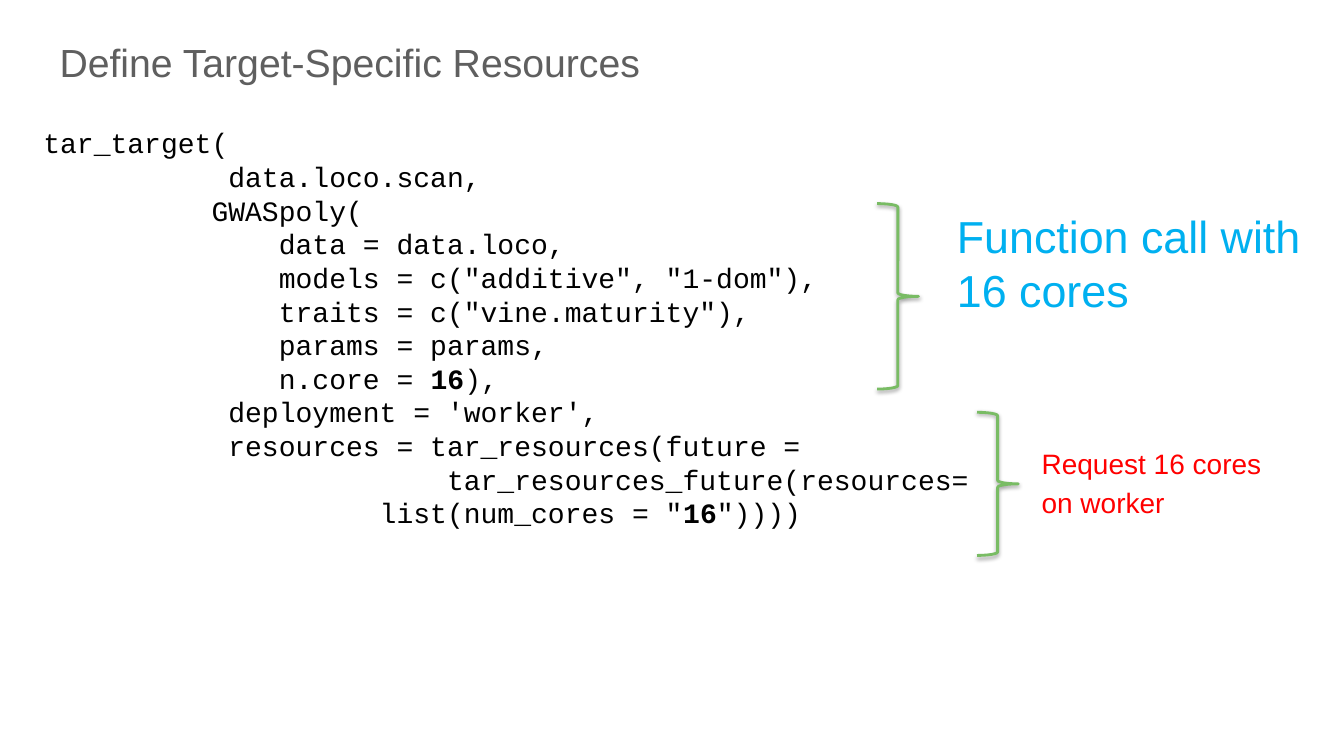
from lxml.etree import SubElement
from pptx import Presentation
from pptx.dml.color import RGBColor
from pptx.enum.shapes import MSO_SHAPE
from pptx.enum.text import MSO_ANCHOR
from pptx.oxml.ns import qn
from pptx.util import Inches, Pt

BLACK = RGBColor(0x00, 0x00, 0x00)
GREY = RGBColor(0x5F, 0x5F, 0x5F)
BLUE = RGBColor(0x00, 0xB0, 0xF0)
RED = RGBColor(0xFF, 0x00, 0x00)
GREEN = RGBColor(0x79, 0xBC, 0x64)

TITLE = {"name": "Arial", "size": Pt(28)}
CALL = {"name": "Arial", "size": Pt(32)}
NOTE = {"name": "Arial", "size": Pt(20)}
CODE = {"name": "Courier New", "size": Pt(20)}

SCRIPT = """tar_target(
           data.loco.scan,
          GWASpoly(
              data = data.loco,
              models = c("additive", "1-dom"),
              traits = c("vine.maturity"),
              params = params,
              n.core = 16),
           deployment = 'worker',
           resources = tar_resources(future =
                        tar_resources_future(resources=
                    list(num_cores = "16"))))"""


def add_run(para, text, form, color):
    """Add a run with the given font values."""
    run = para.add_run()
    run.text = text
    for key, value in form.items():
        setattr(run.font, key, value)
    run.font.color.rgb = color


def add_box(slide, area, anchor=MSO_ANCHOR.TOP):
    """Add an empty wrapping text box and return its frame."""
    frame = slide.shapes.add_textbox(*map(Inches, area)).text_frame
    form = {"word_wrap": True, "vertical_anchor": anchor}
    for side in ("left", "top", "right", "bottom"):
        form["margin_" + side] = Inches(0.05)
    for key, value in form.items():
        setattr(frame, key, value)
    return frame


def add_label(slide, area, text, form, color, anchor=MSO_ANCHOR.TOP):
    """Add a one-paragraph label."""
    para = add_box(slide, area, anchor).paragraphs[0]
    add_run(para, text, form, color)
    return para


def add_code(slide, area, code):
    """Add a code listing with the core count in bold."""
    frame = add_box(slide, area)
    for row, line in enumerate(code.split("\n")):
        para = frame.add_paragraph() if row else frame.paragraphs[0]
        head, count, tail = line.partition("16")
        for text, bold in ((head, False), (count, True), (tail, False)):
            if text:
                add_run(para, text, {**CODE, "bold": bold}, BLACK)


def add_brace(slide, area):
    """Add a green right brace with a soft shadow."""
    brace = slide.shapes.add_shape(MSO_SHAPE.RIGHT_BRACE, *map(Inches, area))
    brace.fill.background()
    brace.line.color.rgb = GREEN
    brace.line.width = Pt(2)
    brace.shadow.inherit = False
    effects = brace.element.spPr.find(qn("a:effectLst"))
    shade = SubElement(effects, qn("a:outerShdw"), blurRad=str(Pt(3)),
                       dist=str(Pt(1.6)), dir="5400000", rotWithShape="0")
    tint = SubElement(shade, qn("a:srgbClr"), val=str(BLACK))
    SubElement(tint, qn("a:alpha"), val="38000")


def main():
    """Build the slide and save it."""
    deck = Presentation()
    deck.slide_width, deck.slide_height = Inches(13.33), Inches(7.5)
    slide = deck.slides.add_slide(deck.slide_layouts[6])
    add_code(slide, (0.38, 1.2, 10.37, 4.48), SCRIPT)
    add_label(slide, (0.54, 0, 11.31, 1.23), "Define Target-Specific Resources",
              TITLE, GREY, MSO_ANCHOR.MIDDLE)
    add_label(slide, (9.44, 2.02, 3.85, 1.18), "Function call with 16 cores",
              CALL, BLUE)
    add_brace(slide, (8.7, 2.02, 0.41, 1.84))
    note = add_label(slide, (10.28, 4.38, 2.61, 0.84),
                     "Request 16 cores on worker", NOTE, RED)
    add_run(note, "\N{NO-BREAK SPACE}", {**NOTE, "size": Pt(24)}, RED)
    add_brace(slide, (9.69, 4.09, 0.41, 1.42))
    deck.save("out.pptx")


if __name__ == "__main__":
    main()
